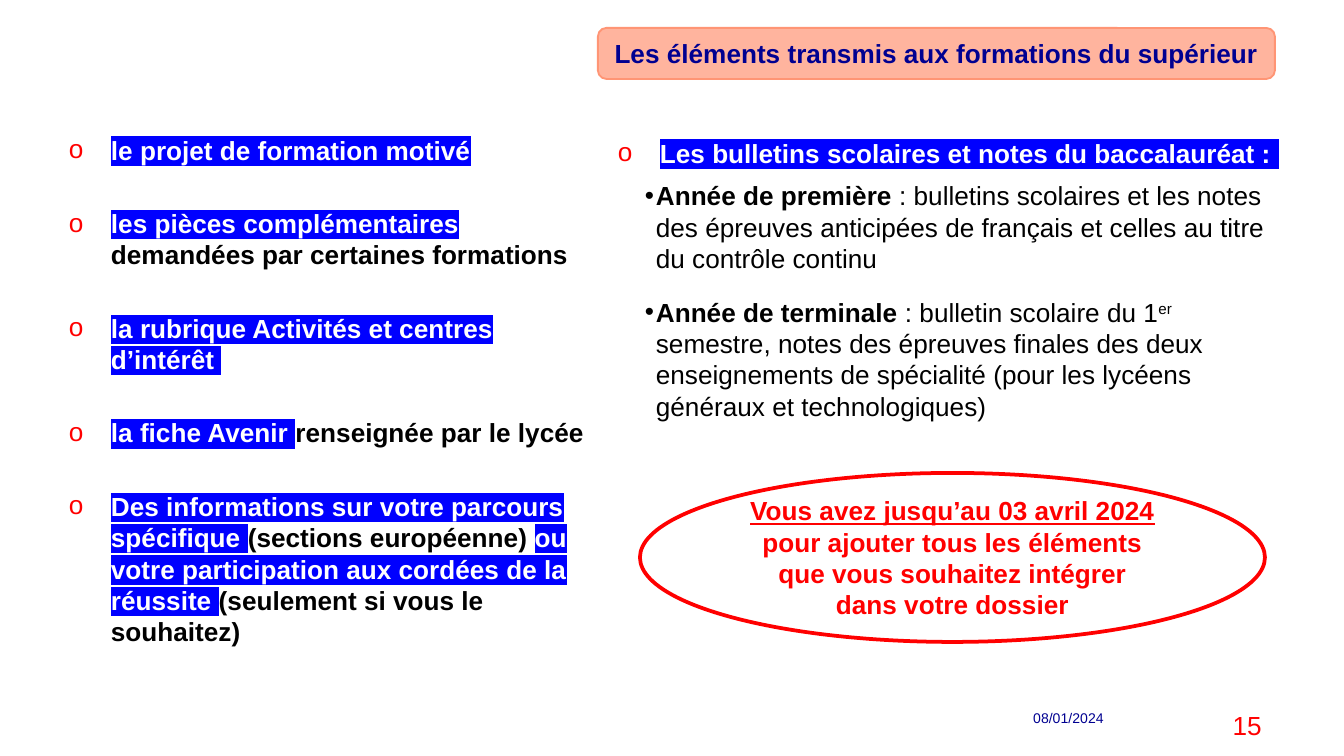
from dataclasses import dataclass

from lxml import etree
from pptx import Presentation
from pptx import util as u
from pptx.dml.color import RGBColor
from pptx.enum import shapes, text
from pptx.oxml.ns import qn


@dataclass(frozen=True)
class Theme:
    font: str = "Arial"
    black: str = "000000"
    white: str = "FFFFFF"
    red: str = "FF0000"
    navy: str = "000091"
    marker: str = "0000FF"
    salmon: str = "FF9575"
    size: float = 14
    small: float = 7.5


THEME = Theme()
PX = 914400 / 134.4

# Span styles
MARKED = dict(color=THEME.white, bold=True, highlight=THEME.marker)
BOLD = dict(color=THEME.black, bold=True)
PLAIN = dict(color=THEME.black)
RAISED = dict(color=THEME.black, baseline=30000)
ALERT = dict(color=THEME.red, bold=True)
DEADLINE = dict(ALERT, underline=True)
TITLE = dict(color=THEME.navy, bold=True)
DATE = dict(color=THEME.navy, size=THEME.small)
NUMBER = dict(color=THEME.red)

# Paragraph styles
ITEM = dict(bullet="o", bullet_color=THEME.red, left=42, hang=42, before=22.5)
YEAR = dict(bullet="•", bullet_color=THEME.black, left=38, hang=11,
            before=6, after=6, level=1)
CENTER = dict(alignment=text.PP_ALIGN.CENTER)
RIGHT = dict(alignment=text.PP_ALIGN.RIGHT)

DOSSIER = [
    (ITEM, [("le projet de formation motivé", MARKED)]),
    (ITEM, [("les pièces complémentaires ", MARKED),
            ("demandées par certaines formations", BOLD)]),
    (ITEM, [("la rubrique Activités et centres d’intérêt ", MARKED)]),
    (ITEM, [("la fiche Avenir ", MARKED), ("renseignée par le lycée", BOLD)]),
    (ITEM, [("Des informations sur votre parcours spécifique ", MARKED),
            ("(sections européenne) ", BOLD),
            ("ou votre participation aux cordées de la réussite ", MARKED),
            ("(seulement si vous le souhaitez)", BOLD)]),
]
BULLETINS = [
    (ITEM, [("Les bulletins scolaires et notes du baccalauréat : ", MARKED)]),
    (YEAR, [("Année de première ", BOLD),
            (": bulletins scolaires et les notes des épreuves anticipées de "
             "français et celles au titre du contrôle continu", PLAIN)]),
    (YEAR, [("Année de terminale ", BOLD),
            (": bulletin scolaire du 1", PLAIN), ("er", RAISED),
            (" semestre, notes des épreuves finales des deux enseignements de "
             "spécialité (pour les lycéens généraux et technologiques)", PLAIN)]),
]
HEADING = [(CENTER, [("Les éléments transmis aux formations du supérieur", TITLE)])]
NOTICE = [
    (CENTER, [("Vous avez jusqu’au 03 avril 2024", DEADLINE)]),
    (CENTER, [("pour ajouter tous les éléments que vous souhaitez intégrer "
               "dans votre dossier", ALERT)]),
]

# Content, place in px, inner margin (None keeps the usual one)
TEXTS = [
    (DOSSIER, (69, 134, 530, 550), 0),
    (BULLETINS, (618, 137, 668, 367), 0),
    ([(RIGHT, [("08/01/2024", DATE)])], (945, 703, 172, 52), None),
    ([(RIGHT, [("15", NUMBER)])], (1117, 703, 158, 52), None),
]
# Content, place in px, preset, fill, opacity in percent, line, line width
PANELS = [
    (HEADING, (598, 28, 677, 51), shapes.MSO_SHAPE.ROUNDED_RECTANGLE,
     THEME.salmon, 70, THEME.salmon, 1),
    (NOTICE, (640, 473, 625, 169), shapes.MSO_SHAPE.OVAL,
     THEME.white, 100, THEME.red, 2),
]


def px(value):
    return u.Emu(round(value * PX))


def rgb(value):
    return RGBColor.from_string(value)


def add_color_child(parent, tag, color):
    holder = etree.SubElement(parent, qn(tag))
    etree.SubElement(holder, qn("a:srgbClr"), val=color)
    return holder


def add_bullet(para, style):
    props = para._p.get_or_add_pPr()
    props.set("marL", str(px(style["left"])))
    props.set("indent", str(-px(style["hang"])))
    add_color_child(props, "a:buClr", style["bullet_color"])
    etree.SubElement(props, qn("a:buFont"), typeface=THEME.font)
    etree.SubElement(props, qn("a:buChar"), char=style["bullet"])


def add_span(para, words, style):
    span = para.add_run()
    span.text = words
    values = dict(name=THEME.font, size=u.Pt(style.get("size", THEME.size)),
                  bold=style.get("bold", False),
                  underline=style.get("underline", False))
    for name, value in values.items():
        setattr(span.font, name, value)
    span.font.color.rgb = rgb(style["color"])
    props = span._r.get_or_add_rPr()
    if "highlight" in style:
        marker = add_color_child(props, "a:highlight", style["highlight"])
        props.find(qn("a:solidFill")).addnext(marker)
    if "baseline" in style:
        props.set("baseline", str(style["baseline"]))


def write(frame, content):
    frame.word_wrap = True
    for index, (style, spans) in enumerate(content):
        para = frame.add_paragraph() if index else frame.paragraphs[0]
        if "bullet" in style:
            add_bullet(para, style)
        values = dict(alignment=style.get("alignment", text.PP_ALIGN.LEFT),
                      level=style.get("level", 0),
                      space_before=u.Pt(style.get("before", 0) if index else 0),
                      space_after=u.Pt(style.get("after", 0)))
        for name, value in values.items():
            setattr(para, name, value)
        for words, span_style in spans:
            add_span(para, words, span_style)


def add_text(page, content, place, margin):
    frame = page.shapes.add_textbox(*map(px, place)).text_frame
    if margin is not None:
        for side in ("left", "top", "right", "bottom"):
            setattr(frame, f"margin_{side}", px(margin))
    write(frame, content)


def add_panel(page, content, place, preset, fill, opacity, line, width):
    shape = page.shapes.add_shape(preset, *map(px, place))
    shape.shadow.inherit = False
    shape.fill.solid()
    shape.fill.fore_color.rgb = rgb(fill)
    if opacity < 100:
        color = shape._element.spPr.find(qn("a:solidFill"))[0]
        etree.SubElement(color, qn("a:alpha"), val=str(opacity * 1000))
    shape.line.color.rgb = rgb(line)
    shape.line.width = u.Pt(width)
    shape.text_frame.vertical_anchor = text.MSO_ANCHOR.MIDDLE
    write(shape.text_frame, content)


def main():
    deck = Presentation()
    deck.slide_width, deck.slide_height = px(1344), px(756)
    page = deck.slides.add_slide(deck.slide_layouts[6])
    for entry in TEXTS:
        add_text(page, *entry)
    for entry in PANELS:
        add_panel(page, *entry)
    deck.save("out.pptx")


if __name__ == "__main__":
    main()
